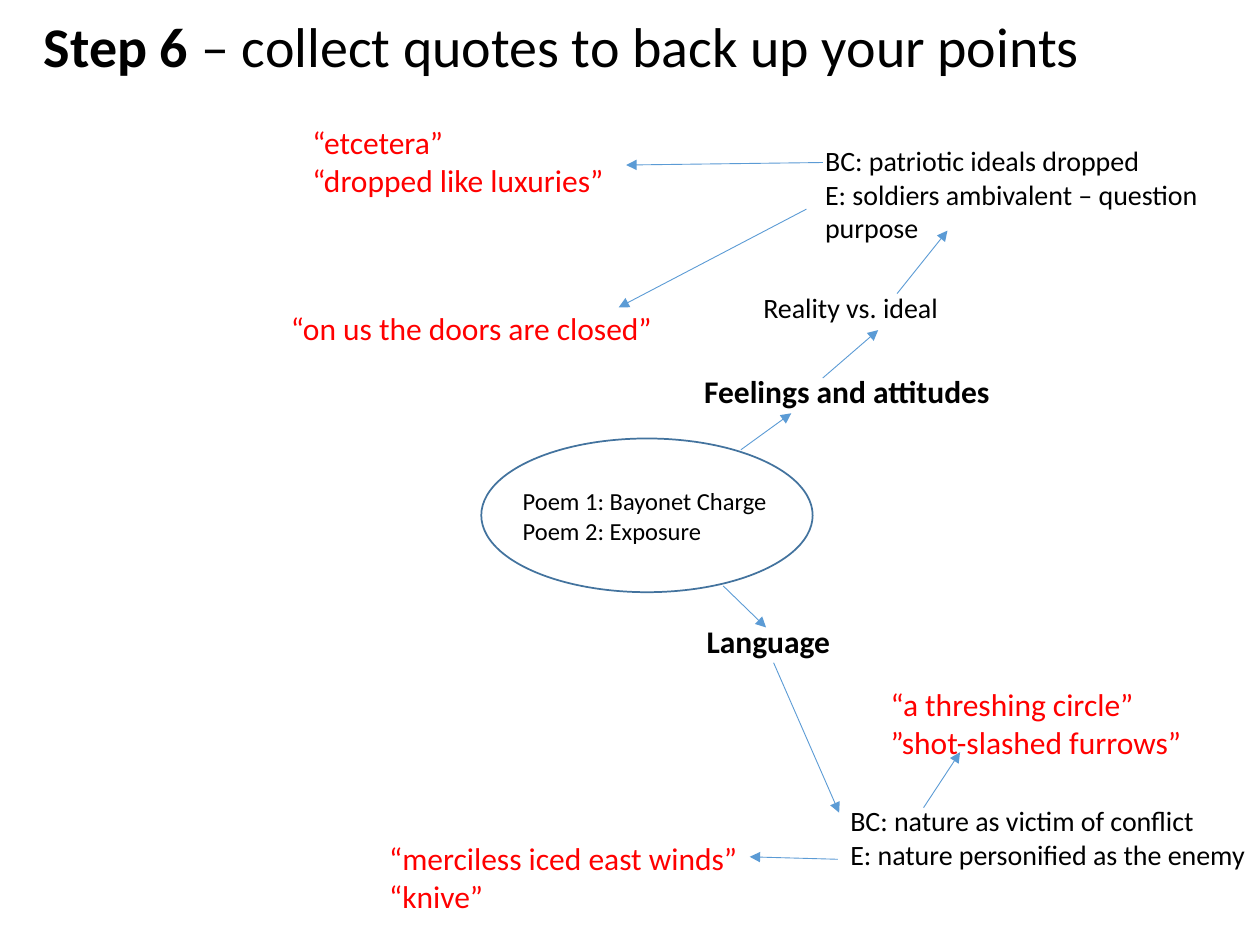
from pptx import Presentation
from pptx.dml.color import RGBColor
from pptx.enum.shapes import MSO_CONNECTOR as Conn, MSO_SHAPE as Shape
from pptx.enum.text import MSO_AUTO_SIZE as Fit
from pptx.oxml.ns import qn
from pptx.util import Pt
from lxml.etree import SubElement as Sub

PX = 9144
BLACK = RGBColor(0, 0, 0)
RED = RGBColor(255, 0, 0)
BLUE = RGBColor(0x5B, 0x9B, 0xD5)
NAVY = RGBColor(0x43, 0x73, 0x9E)

HEAD = dict(size=Pt(18), bold=True)
POEM = dict(size=Pt(14))
POINT = dict(size=Pt(16))
QUOTE = dict(size=Pt(18))


def style(run, tint, form):
    run.font.color.rgb = tint
    for key, val in dict(name="Calibri", bold=False, **{}).items():
        setattr(run.font, key, val)
    for key, val in form.items():
        setattr(run.font, key, val)


def add_box(area, fit):
    frame = slide.shapes.add_textbox(*[n * PX for n in area]).text_frame
    frame.word_wrap = True
    frame.auto_size = fit
    return frame


deck = Presentation()
deck.slide_width, deck.slide_height = 1000 * PX, 750 * PX
slide = deck.slides.add_slide(deck.slide_layouts[6])

title = add_box((25, 10, 968, 145), Fit.NONE).paragraphs[0]
title.line_spacing = 0.9
for text, bold in (("Step 6 ", True), ("– collect quotes to back up your points", False)):
    run = title.add_run()
    run.text = text
    style(run, BLACK, dict(size=Pt(32), bold=bold))

oval = slide.shapes.add_shape(Shape.OVAL, 382 * PX, 348 * PX, 263 * PX, 122 * PX)
oval.shadow.inherit = False
oval.fill.background()
oval.line.color.rgb = NAVY
oval.line.width = Pt(1)

notes = [
    ((405, 381, 218, 57), BLACK, POEM, ["Poem 1: Bayonet Charge", "Poem 2: Exposure"]),
    ((551, 489, 247, 40), BLACK, HEAD, ["Language"]),
    ((549, 290, 247, 40), BLACK, HEAD, ["Feelings and attitudes"]),
    ((645, 109, 348, 91), BLACK, POINT,
     ["BC: patriotic ideals dropped", "E: soldiers ambivalent – question purpose"]),
    ((596, 226, 273, 37), BLACK, POINT, ["Reality vs. ideal"]),
    ((665, 633, 348, 64), BLACK, POINT,
     ["BC: nature as victim of conflict", "E: nature personified as the enemy"]),
    ((299, 661, 358, 71), RED, QUOTE, ["“merciless iced east winds” “knive”"]),
    ((697, 539, 358, 71), RED, QUOTE, ["“a threshing circle”", "”shot-slashed furrows”"]),
    ((238, 93, 358, 71), RED, QUOTE, ["“etcetera”", "“dropped like luxuries”"]),
    ((221, 240, 358, 40), RED, QUOTE, ["“on us the doors are closed”"]),
]
for area, tint, form, lines in notes:
    frame = add_box(area, Fit.SHAPE_TO_FIT_TEXT)
    frame.text = "\n".join(lines)
    for para in frame.paragraphs:
        style(para.runs[0], tint, form)

arrows = [
    (588, 357, 628, 328),
    (653, 300, 697, 262),
    (712, 233, 752, 183),
    (574, 465, 608, 498),
    (614, 526, 666, 645),
    (653, 129, 497, 131),
    (733, 641, 762, 597),
    (665, 682, 595, 680),
    (640, 166, 491, 244),
]
for ends in arrows:
    arrow = slide.shapes.add_connector(Conn.STRAIGHT, *[n * PX for n in ends])
    arrow.line.color.rgb = BLUE
    arrow.line.width = Pt(0.5)
    Sub(arrow.line._get_or_add_ln(), qn("a:tailEnd"), type="triangle")
    Sub(arrow._element.spPr, qn("a:effectLst"))

deck.save("out.pptx")
